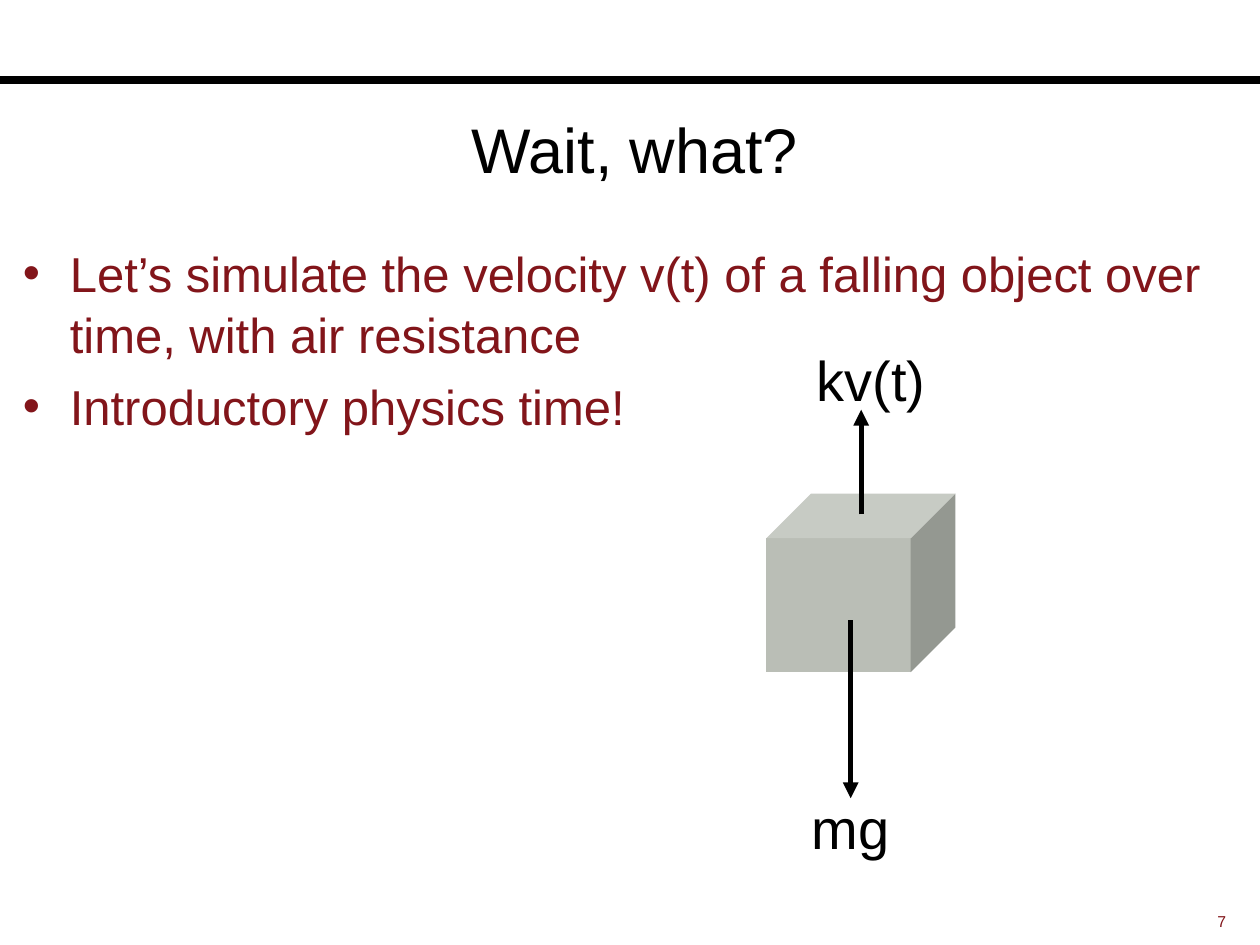
from lxml import etree
from pptx import Presentation
from pptx import util as u
from pptx.dml.color import RGBColor
from pptx.enum import shapes, text
from pptx.oxml.ns import qn

COLORS = {"black": "000000", "maroon": "82151A", "stone": "BABEB6"}
FONT = "Arial"
LEFT, CENTER, RIGHT = (text.PP_ALIGN.LEFT, text.PP_ALIGN.CENTER,
                       text.PP_ALIGN.RIGHT)
TOP, MIDDLE = text.MSO_ANCHOR.TOP, text.MSO_ANCHOR.MIDDLE

# Lengths are in centimetres, text sizes and line widths in points.
WIDTH, HEIGHT = 25.4, 19.05
TITLE = "Wait, what?"
BULLETS = [
    "Let’s simulate the velocity v(t) of a falling object over time, "
    "with air resistance",
    "Introductory physics time!",
]
PAGE_NUMBER = "7"
CUBE = (15.45, 9.95, 3.81, 3.6)
RULE_Y = 1.62
FORCES = [  # label, label box, arrow start, arrow end
    ("kv(t)", (16.08, 6.78, 2.97, 1.62), (17.36, 10.37), (17.36, 8.26)),
    ("mg", (15.66, 15.8, 2.97, 1.62), (17.15, 12.5), (17.15, 16.09)),
]
BULLET_INDENT = 0.95


def add_line(slide, start, end, width, arrow=False):
    line = slide.shapes.add_connector(
        shapes.MSO_CONNECTOR.STRAIGHT, *map(u.Cm, start + end))
    line.line.width = u.Pt(width)
    line.line.color.rgb = RGBColor.from_string(COLORS["black"])
    if arrow:
        etree.SubElement(line.line._get_or_add_ln(), qn("a:tailEnd"),
                         type="triangle")
    etree.SubElement(line._element.spPr, qn("a:effectLst"))


def add_bullet(paragraph):
    properties = paragraph._p.get_or_add_pPr()
    properties.set("marL", str(u.Cm(BULLET_INDENT)))
    properties.set("indent", str(-u.Cm(BULLET_INDENT)))
    etree.SubElement(properties, qn("a:buFont"), typeface=FONT)
    etree.SubElement(properties, qn("a:buChar"), char="•")


def add_text(slide, box, lines, size, color="black", align=CENTER,
             anchor=TOP, spacing=1.05, bulleted=False):
    frame = slide.shapes.add_textbox(*map(u.Cm, box)).text_frame
    frame.word_wrap = True
    frame.vertical_anchor = anchor
    for index, line in enumerate(lines):
        paragraph = frame.paragraphs[0] if index == 0 else frame.add_paragraph()
        paragraph.alignment = align
        paragraph.line_spacing = spacing
        if index:
            paragraph.space_before = u.Pt(size * 0.2)
        if bulleted:
            add_bullet(paragraph)
        run = paragraph.add_run()
        run.text = line
        for name, value in {"name": FONT, "size": u.Pt(size)}.items():
            setattr(run.font, name, value)
        run.font.color.rgb = RGBColor.from_string(COLORS[color])


def add_cube(slide):
    cube = slide.shapes.add_shape(shapes.MSO_SHAPE.CUBE, *map(u.Cm, CUBE))
    cube.shadow.inherit = False
    cube.fill.solid()
    cube.fill.fore_color.rgb = RGBColor.from_string(COLORS["stone"])
    cube.line.fill.background()


def main():
    presentation = Presentation()
    presentation.slide_width = u.Cm(WIDTH)
    presentation.slide_height = u.Cm(HEIGHT)
    slide = presentation.slides.add_slide(presentation.slide_layouts[6])

    add_line(slide, (0, RULE_Y), (WIDTH, RULE_Y), 4.5)
    add_text(slide, (0.42, 1.69, 24.76, 2.54), [TITLE], 36, anchor=MIDDLE)
    add_text(slide, (0.21, 4.72, 24.82, 13.13), BULLETS, 28, "maroon", LEFT,
             bulleted=True)
    add_text(slide, (22.23, 18.26, 2.74, 0.64), [PAGE_NUMBER], 9, "maroon",
             RIGHT, spacing=1.0)
    add_cube(slide)
    for label, box, start, end in FORCES:
        add_line(slide, start, end, 3, arrow=True)
        add_text(slide, box, [label], 32)

    presentation.save("out.pptx")


if __name__ == "__main__":
    main()
